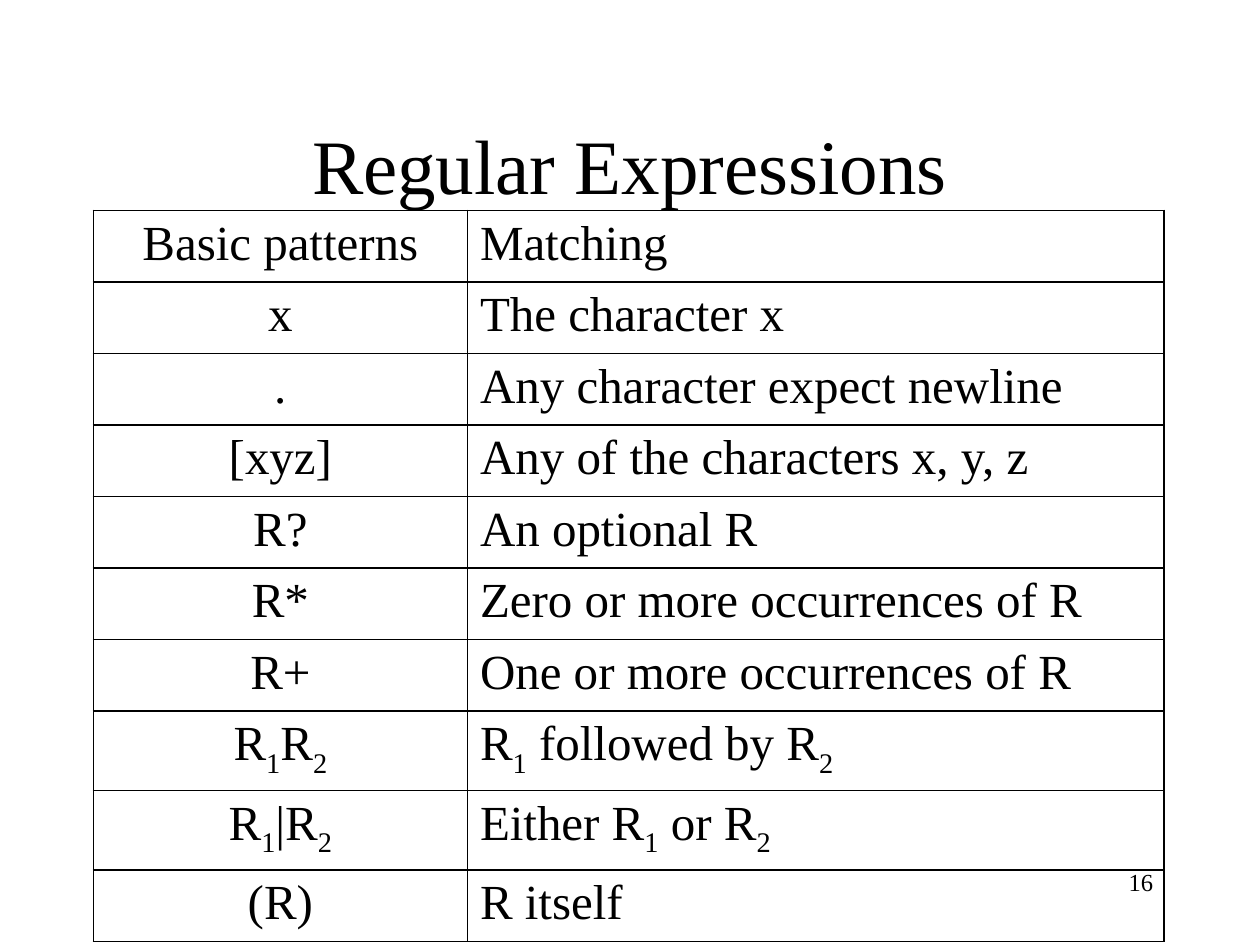
from itertools import groupby

from lxml import etree
from pptx import Presentation
from pptx import util as u
from pptx.dml import color
from pptx.enum import text
from pptx.oxml import ns

Inches = u.Inches
BLACK = "000000"
LEFT, CENTER, RIGHT = text.PP_ALIGN.LEFT, text.PP_ALIGN.CENTER, text.PP_ALIGN.RIGHT


def add_text(paragraph, content, size, alignment):
    """Write content as runs; digits after letters become subscripts."""
    paragraph.alignment = alignment
    for is_digit, characters in groupby(content, str.isdigit):
        run = paragraph.add_run()
        run.text = "".join(characters)
        for name, value in {"name": "Times New Roman", "size": u.Pt(size)}.items():
            setattr(run.font, name, value)
        run.font.color.rgb = color.RGBColor.from_string(BLACK)
        if is_digit and not content.isdigit():
            run.font._element.set("baseline", "-25000")


def add_borders(cell):
    """Draw a thin black line on all four sides, ahead of the cell fill."""
    properties = cell._tc.get_or_add_tcPr()
    for index, side in enumerate(("lnL", "lnR", "lnT", "lnB")):
        line = etree.Element(ns.qn("a:" + side), w=str(u.Pt(1)))
        fill = etree.SubElement(line, ns.qn("a:solidFill"))
        etree.SubElement(fill, ns.qn("a:srgbClr"), val=BLACK)
        properties.insert(index, line)


presentation = Presentation()
presentation.slide_width, presentation.slide_height = Inches(10), Inches(7.5)
slide = presentation.slides.add_slide(presentation.slide_layouts[6])

# Title
title = slide.shapes.add_textbox(Inches(0.75), Inches(0.67), Inches(8.5), Inches(1.25))
title.text_frame.word_wrap = True
title.text_frame.vertical_anchor = text.MSO_ANCHOR.MIDDLE
add_text(title.text_frame.paragraphs[0], "Regular Expressions", 44, CENTER)

# Table of patterns
patterns = [
    ("Basic patterns", "Matching"),
    ("x", "The character x"),
    (".", "Any character expect newline"),
    ("[xyz]", "Any of the characters x, y, z"),
    ("R?", "An optional R"),
    ("R*", "Zero or more occurrences of R"),
    ("R+", "One or more occurrences of R"),
    ("R1R2", "R1 followed by R2"),
    ("R1|R2", "Either R1 or R2"),
    ("(R)", "R itself"),
]
table = slide.shapes.add_table(
    len(patterns), 2, Inches(0.74), Inches(1.67), Inches(8.5), Inches(5.67)
).table
table.first_row = table.horz_banding = False
for column, width in zip(table.columns, (2.97, 5.53)):
    column.width = Inches(width)
for row, contents in zip(table.rows, patterns):
    for cell, content, alignment in zip(row.cells, contents, (CENTER, LEFT)):
        cell.fill.background()
        add_borders(cell)
        paragraph = cell.text_frame.paragraphs[0]
        add_text(paragraph, content, 28, alignment)
        # Space before as a share of the line height
        spacing = etree.SubElement(paragraph._p.get_or_add_pPr(), ns.qn("a:spcBef"))
        etree.SubElement(spacing, ns.qn("a:spcPct"), val="20000")

# Slide number
number = slide.shapes.add_textbox(Inches(7.17), Inches(6.83), Inches(2.08), Inches(0.5))
number.text_frame.word_wrap = True
add_text(number.text_frame.paragraphs[0], "16", 14, RIGHT)

presentation.save("out.pptx")
